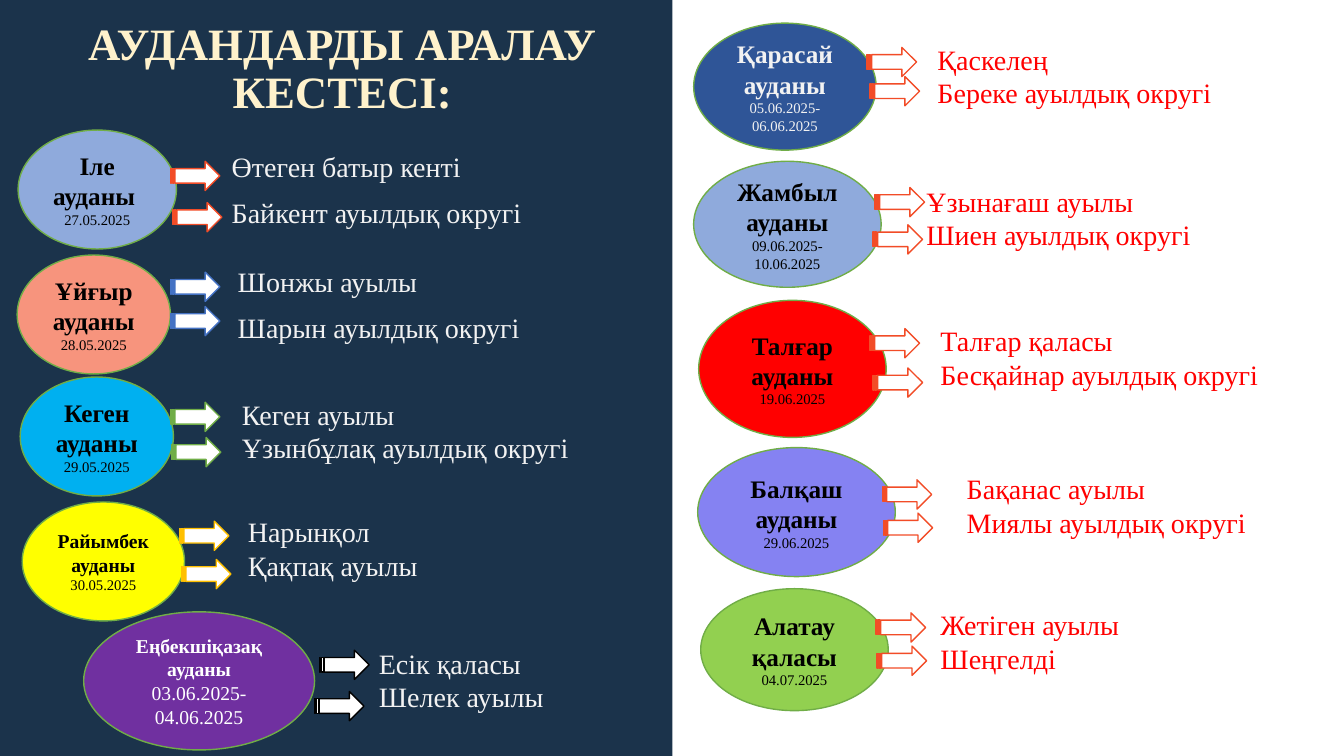
import dataclasses

import pptx
import pptx.dml.color
import pptx.enum.shapes
import pptx.enum.text
import pptx.util

PX = 9144
FONT = "Times New Roman"
SHAPES = pptx.enum.shapes.MSO_SHAPE
ALIGN = pptx.enum.text.PP_ALIGN
ANCHOR = pptx.enum.text.MSO_ANCHOR
FIT = pptx.enum.text.MSO_AUTO_SIZE
ARROW_SIZE = (49, 29)
PLACES_SIZE = (380, 77)


@dataclasses.dataclass
class District:
    """One visit: an oval, two arrows and two places, offset from the oval's corner."""

    name: str
    date: str
    box: tuple
    fill: str
    arrows: tuple
    places_at: tuple
    places: tuple
    arrow_line: str = "F24C27"
    name_size: float = 18
    date_size: float = 10.5
    text_color: str = "000000"
    gap: float = 0


LEFT_DISTRICTS = [
    District("Іле ауданы ", "27.05.2025", (18, 129, 157, 118), "8FAADC",
             ((151, 31), (153, 72)), (202, 14),
             ("Өтеген батыр кенті", "Байкент ауылдық округі"), gap=9.5),
    District("Ұйғыр ауданы", "28.05.2025", (17, 253, 152, 118), "F7947D",
             ((152, 17), (152, 51)), (209, 4),
             ("Шонжы ауылы", "Шарын ауылдық округі"), "4472C4", gap=9.5),
    District("Кеген ауданы", "29.05.2025", (20, 374, 152, 118), "00B0F0",
             ((149, 25), (150, 60)), (210, 15),
             ("Кеген ауылы", "Ұзынбұлақ ауылдық округі"), "70AD47"),
    District("Райымбек ауданы", "30.05.2025", (22, 498, 161, 118), "FFFF00",
             ((156, 19), (158, 57)), (214, 8),
             ("Нарынқол", "Қақпақ ауылы"), "FFC000", name_size=14),
    District("Еңбекшіқазақ ауданы", "03.06.2025-04.06.2025", (83, 607, 229, 137), "7030A0",
             ((234, 38), (229, 79)), (283, 29),
             ("Есік қаласы", "Шелек ауылы"), "000000",
             name_size=14, date_size=14, text_color="FFFFFF"),
]

RIGHT_DISTRICTS = [
    District("Қарасай ауданы", "05.06.2025-06.06.2025", (688, 23, 181, 126), "2F5597",
             ((172, 24), (175, 53)), (232, 14),
             ("Қаскелең", "Береке ауылдық округі"), text_color="F2F2F2"),
    District("Жамбыл ауданы", "09.06.2025-10.06.2025", (688, 160, 186, 125), "8FAADC",
             ((180, 26), (178, 63)), (221, 18),
             ("Ұзынағаш ауылы", "Шиен ауылдық округі")),
    District("Талғар ауданы", "19.06.2025", (693, 298, 186, 136), "FF0000",
             ((170, 28), (173, 67)), (230, 18),
             ("Талғар қаласы", "Бесқайнар ауылдық округі")),
    District("Балқаш ауданы", "29.06.2025", (692, 444, 196, 128), "8582F2",
             ((183, 32), (184, 65)), (257, 19),
             ("Бақанас ауылы", "Миялы ауылдық округі")),
    District("Алатау қаласы", "04.07.2025", (695, 584, 186, 121), "92D050",
             ((174, 24), (175, 57)), (228, 14),
             ("Жетіген ауылы", "Шеңгелді")),
]


def color(value):
    """Turn a hex string into a colour."""
    return pptx.dml.color.RGBColor.from_string(value)


def emu(*lengths):
    """Turn px lengths into EMU."""
    return [pptx.util.Emu(length * PX) for length in lengths]


def write(frame, text, size=20, fill="000000", bold=False, align=ALIGN.LEFT, gap=0):
    """Add one formatted paragraph to a text frame."""
    paragraph = frame.add_paragraph() if frame.text else frame.paragraphs[0]
    paragraph.text = text
    paragraph.alignment = align
    paragraph.space_before = pptx.util.Pt(gap)
    font = paragraph.font
    font.name = FONT
    font.size = pptx.util.Pt(size)
    font.bold = bold
    font.color.rgb = color(fill)
    return paragraph


def add_preset(slide, kind, box, fill, line=None):
    """Add a flat preset shape with an optional outline."""
    shape = slide.shapes.add_shape(kind, *emu(*box))
    shape.shadow.inherit = False
    shape.fill.solid()
    shape.fill.fore_color.rgb = color(fill)
    if line:
        shape.line.color.rgb = color(line)
        shape.line.width = pptx.util.Pt(1)
    else:
        shape.line.fill.background()
    return shape


def add_heading(slide, box, text):
    """Place the title on the dark left panel."""
    title = slide.shapes.title
    title.left, title.top, title.width, title.height = emu(*box)
    frame = title.text_frame
    frame.word_wrap = True
    frame.auto_size = FIT.NONE
    frame.vertical_anchor = ANCHOR.MIDDLE
    paragraph = write(frame, text, size=32, fill="FFF2CC", bold=True, align=ALIGN.CENTER)
    paragraph.line_spacing = 0.9
    panel = add_preset(slide, SHAPES.RECTANGLE, (0, 0, 667, 750), "1B334B")
    title.element.addprevious(panel.element)


def add_district(slide, district, places_color):
    """Place a district's oval, arrows and list of places."""
    left, top = district.box[:2]
    oval = add_preset(slide, SHAPES.OVAL, district.box, district.fill, "70AD47")
    frame = oval.text_frame
    frame.word_wrap = True
    frame.vertical_anchor = ANCHOR.MIDDLE
    write(frame, district.name, size=district.name_size, fill=district.text_color,
          bold=True, align=ALIGN.CENTER)
    write(frame, district.date, size=district.date_size, fill=district.text_color,
          align=ALIGN.CENTER)

    for x, y in district.arrows:
        add_preset(slide, SHAPES.STRIPED_RIGHT_ARROW, (left + x, top + y, *ARROW_SIZE),
                   "FFFFFF", district.arrow_line)

    x, y = district.places_at
    places = slide.shapes.add_textbox(*emu(left + x, top + y, *PLACES_SIZE)).text_frame
    places.word_wrap = True
    places.auto_size = FIT.SHAPE_TO_FIT_TEXT
    for index, place in enumerate(district.places):
        write(places, place, fill=places_color, gap=district.gap if index else 0)


def main():
    """Build the visit schedule slide."""
    presentation = pptx.Presentation()
    presentation.slide_width, presentation.slide_height = emu(1333, 750)
    slide = presentation.slides.add_slide(presentation.slide_layouts[5])
    add_heading(slide, (32, 33, 615, 73), "АУДАНДАРДЫ АРАЛАУ КЕСТЕСІ:")
    for districts, places_color in ((LEFT_DISTRICTS, "F2F2F2"), (RIGHT_DISTRICTS, "FF0000")):
        for district in districts:
            add_district(slide, district, places_color)
    presentation.save("out.pptx")


if __name__ == "__main__":
    main()
